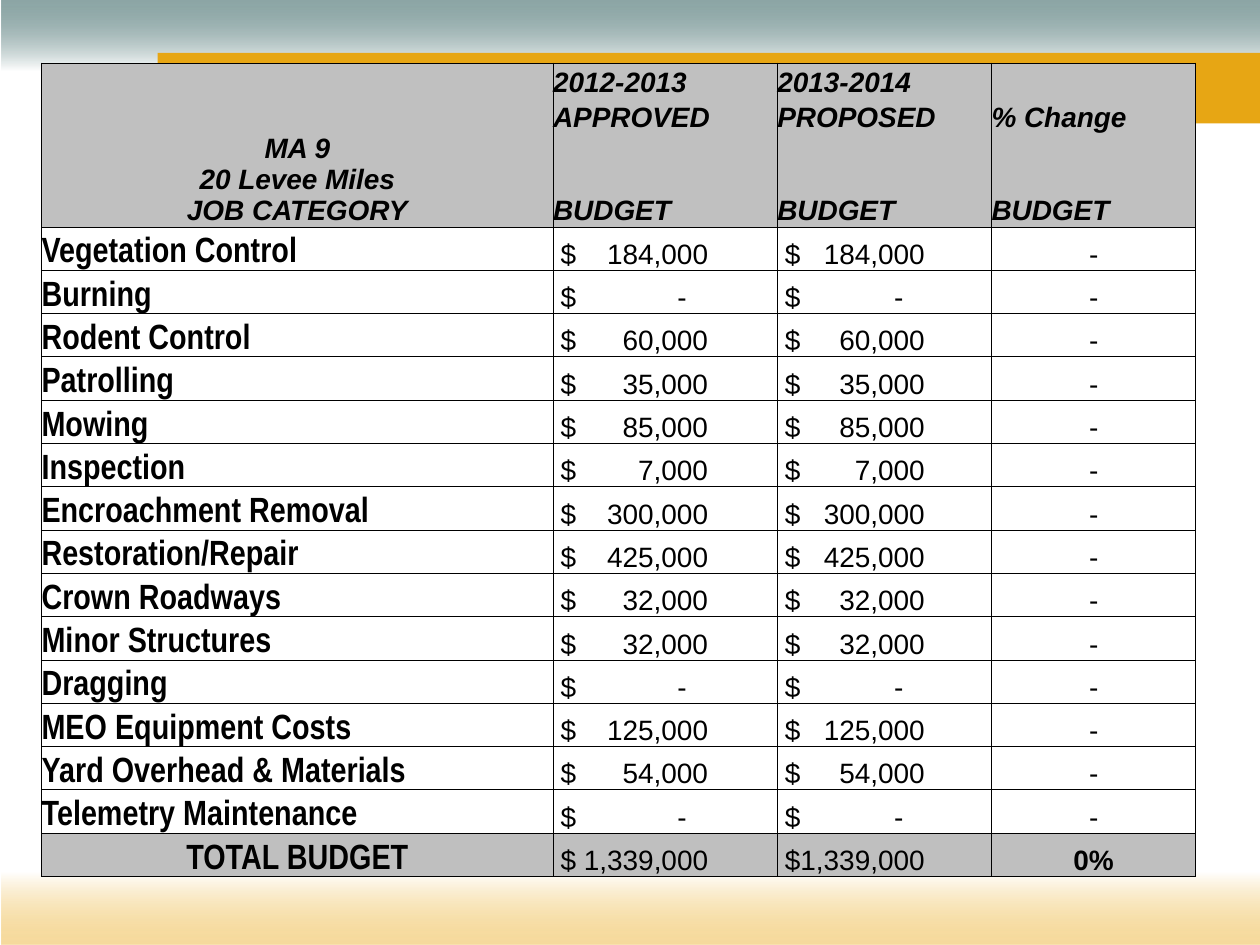
import dataclasses

import lxml.etree
import pptx
import pptx.dml.color
import pptx.enum.shapes
import pptx.enum.text
import pptx.oxml.ns
import pptx.util

Inches = pptx.util.Inches
qn = pptx.oxml.ns.qn
LEFT = pptx.enum.text.PP_ALIGN.LEFT
CENTER = pptx.enum.text.PP_ALIGN.CENTER


@dataclasses.dataclass(frozen=True)
class Theme:
    sky: str = "215352"
    sand: str = "EEB840"
    band: str = "E7A614"
    white: str = "FFFFFF"
    ink: str = "000000"
    header_fill: str = "C0C0C0"
    total_fill: str = "BFBFBF"
    body_font: str = "Arial"
    category_font: str = "Arial Narrow"
    body_size: int = 16
    category_size: int = 20
    border_width: float = 0.5


def rgb(value):
    return pptx.dml.color.RGBColor.from_string(value)


class BudgetSlide:
    def __init__(self, deck, theme):
        self.theme = theme
        self.slide = deck.slides.add_slide(deck.slide_layouts[6])

    def bar(self, left, top, width, height):
        bar = self.slide.shapes.add_shape(
            pptx.enum.shapes.MSO_SHAPE.RECTANGLE,
            Inches(left), Inches(top), Inches(width), Inches(height))
        bar.shadow.inherit = False
        bar.line.fill.background()
        return bar

    def solid_bar(self, left, top, width, height, color):
        fill = self.bar(left, top, width, height).fill
        fill.solid()
        fill.fore_color.rgb = rgb(color)

    def fading_bar(self, left, top, width, height, color, angle):
        """Fade from a half-transparent colour to white; angle is counter-clockwise."""
        bar = self.bar(left, top, width, height)
        bar.fill.gradient()
        bar.fill.gradient_angle = angle
        start, end = bar.fill.gradient_stops
        start.position, start.color.rgb = 0, rgb(color)
        end.position, end.color.rgb = 0.52, rgb(self.theme.white)
        tint = next(bar.fill._xPr.iter(qn("a:srgbClr")))
        lxml.etree.SubElement(tint, qn("a:alpha"), val="51000")

    def table(self, left, top, column_widths, row_heights):
        table = self.slide.shapes.add_table(
            len(row_heights), len(column_widths), Inches(left), Inches(top),
            Inches(sum(column_widths)), Inches(sum(row_heights))).table
        table.first_row = table.horz_banding = False
        for column, width in zip(table.columns, column_widths):
            column.width = Inches(width)
        for row, height in zip(table.rows, row_heights):
            row.height = Inches(height)
        return table

    def borders(self, cell, sides):
        properties = cell._tc.get_or_add_tcPr()
        width = str(pptx.util.Pt(self.theme.border_width))
        for side in "LRTB":
            line = lxml.etree.SubElement(properties, qn(f"a:ln{side}"), w=width)
            if side in sides:
                fill = lxml.etree.SubElement(line, qn("a:solidFill"))
                lxml.etree.SubElement(fill, qn("a:srgbClr"), val=self.theme.ink)
            else:
                lxml.etree.SubElement(line, qn("a:noFill"))

    def cell(self, cell, text, fill=None, sides="LRTB", align=LEFT, inset=0,
             tab=None, category=False, bold=False, italic=False):
        """Write one cell; tab is the right-aligned stop after the currency sign."""
        theme = self.theme
        self.borders(cell, sides)
        if fill:
            cell.fill.solid()
            cell.fill.fore_color.rgb = rgb(fill)
        else:
            cell.fill.background()
        cell.margin_left = Inches(inset)
        cell.margin_right = cell.margin_top = cell.margin_bottom = 0
        cell.vertical_anchor = pptx.enum.text.MSO_ANCHOR.BOTTOM
        cell.text_frame.text = text
        for paragraph in cell.text_frame.paragraphs:
            paragraph.alignment = align
            if tab:
                stops = lxml.etree.SubElement(
                    paragraph._p.get_or_add_pPr(), qn("a:tabLst"))
                lxml.etree.SubElement(
                    stops, qn("a:tab"), pos=str(Inches(tab)), algn="r")
            font = paragraph.font
            font.name = theme.category_font if category else theme.body_font
            font.size = pptx.util.Pt(
                theme.category_size if category else theme.body_size)
            font.bold, font.italic = bold, italic
            font.color.rgb = rgb(theme.ink)


AMOUNTS = {
    "Vegetation Control": 184000,
    "Burning": 0,
    "Rodent Control": 60000,
    "Patrolling": 35000,
    "Mowing": 85000,
    "Inspection": 7000,
    "Encroachment Removal": 300000,
    "Restoration/Repair": 425000,
    "Crown Roadways": 32000,
    "Minor Structures": 32000,
    "Dragging": 0,
    "MEO Equipment Costs": 125000,
    "Yard Overhead & Materials": 54000,
    "Telemetry Maintenance": 0,
}
HEADER = [
    ("2012-2013", "2013-2014", ""),
    ("APPROVED", "PROPOSED", "% Change"),
    ("BUDGET", "BUDGET", "BUDGET"),
]
HEADER_SIDES = ["LRT", "LR", "LRB"]
AMOUNT_STOPS = {1: 1.17, 2: 1.11}
DASH_SHIFT = 0.17
CURRENCY_INSET = 0.06


def fill_header(page, table):
    style = dict(fill=page.theme.header_fill, bold=True, italic=True)
    for row, (labels, sides) in enumerate(zip(HEADER, HEADER_SIDES)):
        title = "MA 9\n20 Levee Miles\nJOB CATEGORY" if row == 0 else ""
        page.cell(table.cell(row, 0), title, align=CENTER, **style)
        for column, label in enumerate(labels, 1):
            page.cell(table.cell(row, column), label, sides=sides, **style)
    table.cell(0, 0).merge(table.cell(len(HEADER) - 1, 0))


def fill_amounts(page, table):
    for row, (category, amount) in enumerate(AMOUNTS.items(), len(HEADER)):
        page.cell(table.cell(row, 0), category, category=True, bold=True)
        for column, stop in AMOUNT_STOPS.items():
            page.cell(table.cell(row, column),
                      f"$\t{amount:,}" if amount else "$\t-",
                      inset=CURRENCY_INSET,
                      tab=stop if amount else stop - DASH_SHIFT)
        page.cell(table.cell(row, 3), "-", align=CENTER)


def fill_total(page, table):
    row = len(HEADER) + len(AMOUNTS)
    total = f"{sum(AMOUNTS.values()):,}"
    fill = page.theme.total_fill
    page.cell(table.cell(row, 0), "TOTAL BUDGET", fill, align=CENTER,
              category=True, bold=True)
    page.cell(table.cell(row, 1), f"$ {total}", fill, inset=CURRENCY_INSET)
    page.cell(table.cell(row, 2), f"${total}", fill, inset=CURRENCY_INSET)
    page.cell(table.cell(row, 3), "0%", fill, align=CENTER, bold=True)


def main():
    deck = pptx.Presentation()
    deck.slide_width, deck.slide_height = Inches(10), Inches(7.5)
    theme = Theme()
    page = BudgetSlide(deck, theme)
    page.fading_bar(0.01, 0, 9.99, 1.09, theme.sky, 270)
    page.solid_bar(1.25, 0.42, 8.75, 0.56, theme.band)
    page.fading_bar(0.01, 6.39, 9.99, 1.11, theme.sand, 90)

    header_height, table_height = 0.28, 6
    body_rows = len(AMOUNTS) + 1
    body_height = (table_height - header_height * len(HEADER)) / body_rows
    table = page.table(
        0.33, 0.5, [4.06, 1.78, 1.7, 1.62],
        [header_height] * len(HEADER) + [body_height] * body_rows)
    fill_header(page, table)
    fill_amounts(page, table)
    fill_total(page, table)
    deck.save("out.pptx")


if __name__ == "__main__":
    main()
